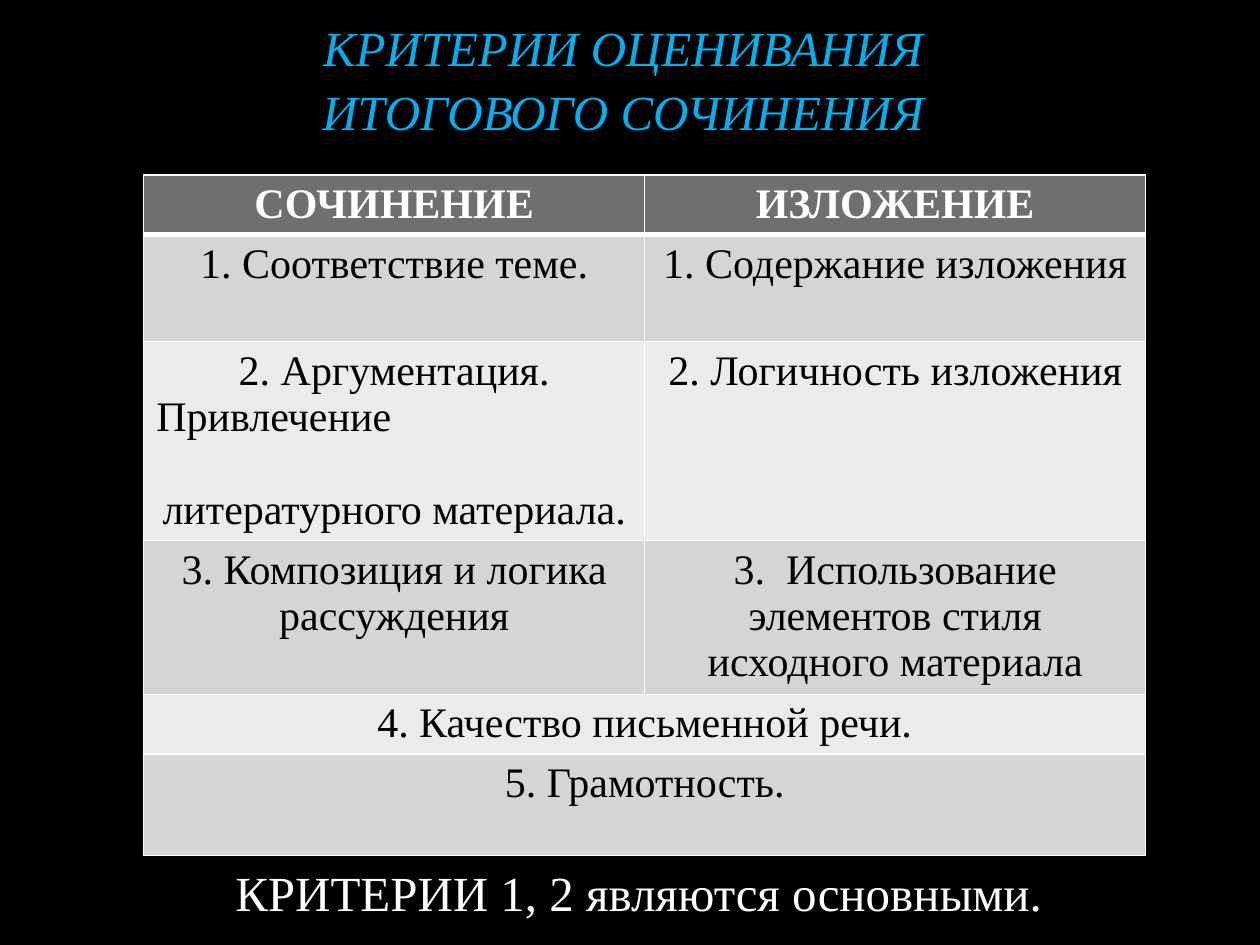
import pptx
import pptx.util
import pptx.dml.color
import pptx.enum.text
import pptx.oxml
import pptx.oxml.ns
import lxml.etree

Pt = pptx.util.Pt
Align = pptx.enum.text.PP_ALIGN
Anchor = pptx.enum.text.MSO_ANCHOR

COLORS = {
    "background": "000000", "title": "00B0F0", "header": "6F6F6F",
    "odd": "D5D5D5", "even": "EBEBEB", "light": "FFFFFF", "dark": "000000",
}
FONT = "Times New Roman"
TITLE = "КРИТЕРИИ ОЦЕНИВАНИЯ ИТОГОВОГО СОЧИНЕНИЯ"
FOOTNOTE = "КРИТЕРИИ 1, 2 являются основными."
ROWS = [
    (34, ["СОЧИНЕНИЕ", "ИЗЛОЖЕНИЕ"]),
    (61, ["1. Соответствие теме.", "1. Содержание изложения"]),
    (113.7, ["2. Аргументация.\nПривлечение\nлитературного материала.",
             "2. Логичность изложения"]),
    (88, ["3. Композиция и логика рассуждения",
          "3.  Использование элементов стиля исходного материала"]),
    (34, ["4. Качество письменной речи."]),
    (58, ["5. Грамотность."]),
]
TABLE_LEFT, TABLE_TOP, COLUMN_WIDTH = 82.1, 100.1, 286.3
LINE_HEIGHT = 26.6


def rgb(name):
    return pptx.dml.color.RGBColor.from_string(COLORS[name])


def style(para, size, color, align=Align.CENTER, bold=False, italic=False):
    para.alignment = align
    font = para.font
    font.name, font.size, font.bold, font.italic = FONT, Pt(size), bold, italic
    font.color.rgb = rgb(color)


def add_borders(cell, top, bottom):
    properties = cell._tc.get_or_add_tcPr()
    widths = {"lnL": 1, "lnR": 1, "lnT": top, "lnB": bottom}
    for index, (side, width) in enumerate(widths.items()):
        line = pptx.oxml.parse_xml(
            f'<a:{side} {pptx.oxml.ns.nsdecls("a")} w="{Pt(width)}"><a:solidFill>'
            f'<a:srgbClr val="{COLORS["light"]}"/></a:solidFill></a:{side}>')
        properties.insert(index, line)


def fill_table(table):
    for column in table.columns:
        column.width = Pt(COLUMN_WIDTH)
    for row, (height, texts) in enumerate(ROWS):
        table.rows[row].height = Pt(height)
        header = row == 0
        shade = "header" if header else ("odd" if row % 2 else "even")
        for column in range(2):
            cell = table.cell(row, column)
            cell.fill.solid()
            cell.fill.fore_color.rgb = rgb(shade)
            add_borders(cell, 3 if row == 1 else 1, 3 if header else 1)
        if len(texts) == 1:
            table.cell(row, 0).merge(table.cell(row, 1))
        for column, text in enumerate(texts):
            cell = table.cell(row, column)
            cell.text = text
            for para in cell.text_frame.paragraphs:
                style(para, 24, "light" if header else "dark", bold=header)


deck = pptx.Presentation()
deck.slide_width, deck.slide_height = Pt(720), Pt(540)
page = deck.slides.add_slide(deck.slide_layouts[5])
page.background.fill.solid()
page.background.fill.fore_color.rgb = rgb("background")

title = page.shapes.title
title.left, title.top, title.width, title.height = Pt(98), Pt(-16.5), Pt(516), Pt(120)
title.text_frame.text = TITLE
title.text_frame.vertical_anchor = Anchor.MIDDLE
style(title.text_frame.paragraphs[0], 28, "title", italic=True)
title.text_frame.paragraphs[0].line_spacing = 1.09

table = page.shapes.add_table(
    len(ROWS), 2, Pt(TABLE_LEFT), Pt(TABLE_TOP), Pt(2 * COLUMN_WIDTH),
    Pt(sum(height for height, texts in ROWS))).table
fill_table(table)
attraction = table.cell(2, 0).text_frame.paragraphs[1]
attraction.alignment = Align.LEFT
attraction.space_after = Pt(LINE_HEIGHT)

box = page.shapes.add_textbox(Pt(127.4), Pt(489.6), Pt(481), Pt(41))
box.text_frame.word_wrap = False
box.text_frame.auto_size = pptx.enum.text.MSO_AUTO_SIZE.SHAPE_TO_FIT_TEXT
box.text_frame.text = FOOTNOTE
style(box.text_frame.paragraphs[0], 28, "light", align=Align.LEFT)

deck.save("out.pptx")
